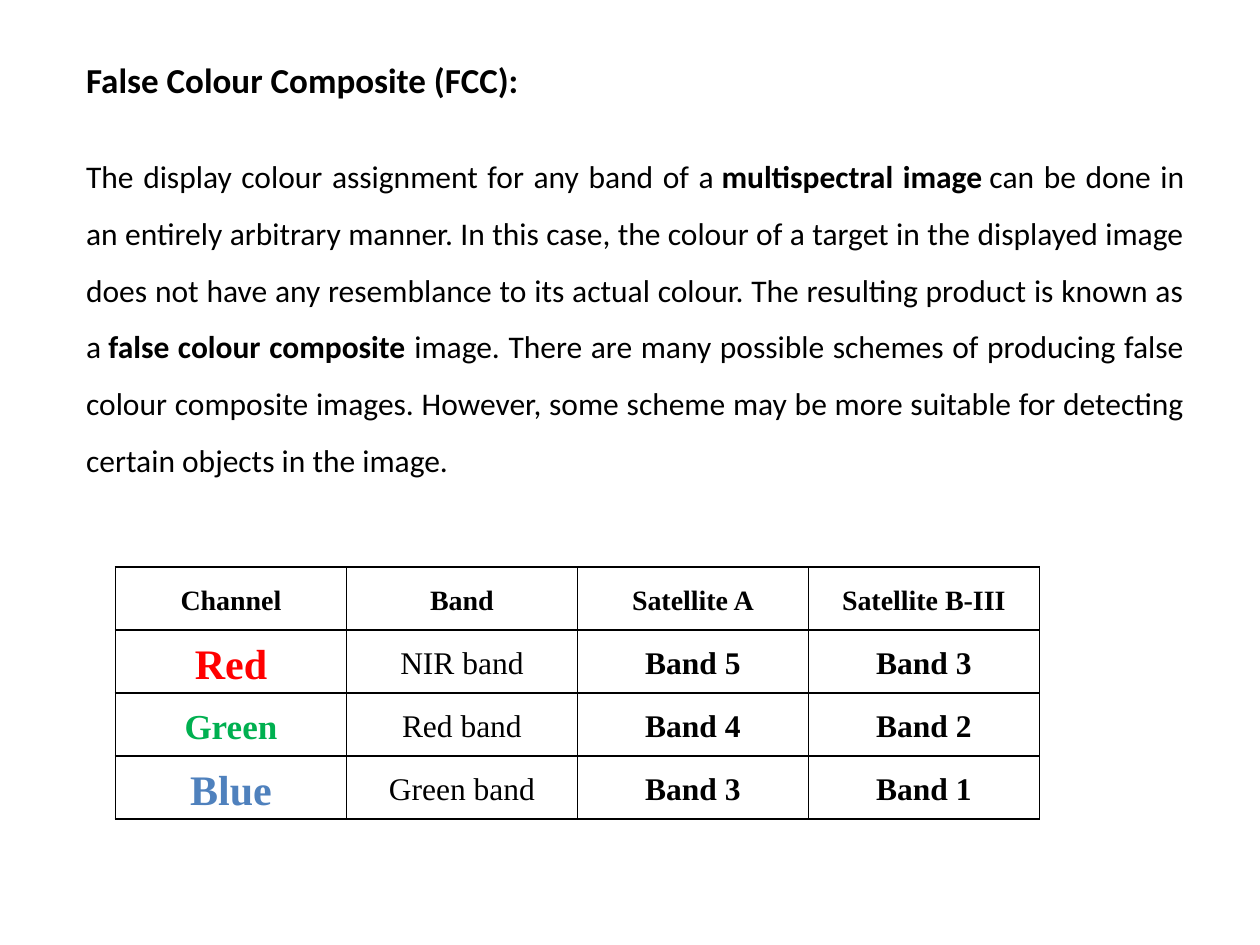
from lxml.etree import SubElement
from pptx import Presentation
from pptx.dml.color import RGBColor
from pptx.enum.text import MSO_ANCHOR as Anchor, MSO_AUTO_SIZE as AutoSize, PP_ALIGN as Align
from pptx.oxml.ns import qn
from pptx.util import Pt

COLORS = {"black": "000000", "red": "FF0000", "green": "00B050", "blue": "4F81BD"}
TEXT_FONT, TABLE_FONT = "Calibri", "Times New Roman"

TITLE = "False Colour Composite (FCC):"
# Each part is a text and whether it is bold
BODY = [
    ("The display colour assignment for any band of a\u00a0", False),
    ("multispectral image", True),
    ("\u00a0can be done in an entirely arbitrary manner. In this case, the colour of a "
     "target in the displayed image does not have any resemblance to its actual colour. "
     "The resulting product is known as a\u00a0", False),
    ("false colour composite ", True),
    ("image. There are many possible schemes of producing false colour composite images. "
     "However, some scheme may be more suitable for detecting certain objects in the "
     "image.", False),
]
HEADER = ["Channel", "Band", "Satellite A", "Satellite B-III"]
CHANNELS = [
    ["Red", "NIR band", "Band 5", "Band 3"],
    ["Green", "Red band", "Band 4", "Band 2"],
    ["Blue", "Green band", "Band 3", "Band 1"],
]
CHANNEL_SIZES = {"Red": 24, "Green": 20, "Blue": 24}


def add_text(para, text, *, size, font=TEXT_FONT, color="black", bold=False):
    span = para.add_run()
    span.text = text
    span.font.name = font
    span.font.size = Pt(size)
    span.font.bold = bold
    span.font.color.rgb = RGBColor.from_string(COLORS[color])


def set_paragraph(para, *, align, spacing=1.0):
    para.alignment = align
    para.line_spacing = spacing
    para.space_before = Pt(0)


def place(box, left, top, width, height):
    box.left, box.top, box.width, box.height = Pt(left), Pt(top), Pt(width), Pt(height)
    frame = box.text_frame
    frame.word_wrap = True
    frame.auto_size = AutoSize.NONE
    frame.vertical_anchor = Anchor.TOP
    return frame.paragraphs[0]


def remove_bullet(para):
    properties = para._p.get_or_add_pPr()
    properties.set("marL", "0")
    properties.set("indent", "0")
    SubElement(properties, qn("a:buNone"))


def set_borders(cell, color="black", width=1):
    properties = cell._tc.get_or_add_tcPr()
    for side in ("L", "R", "T", "B"):
        line = SubElement(properties, qn(f"a:ln{side}"), w=str(Pt(width)))
        fill = SubElement(line, qn("a:solidFill"))
        SubElement(fill, qn("a:srgbClr"), val=COLORS[color])


def fill_cell(cell, text, **text_format):
    set_borders(cell)
    cell.fill.background()
    cell.vertical_anchor = Anchor.MIDDLE
    cell.margin_left = cell.margin_right = Pt(5)
    cell.margin_top = cell.margin_bottom = Pt(0)
    para = cell.text_frame.paragraphs[0]
    set_paragraph(para, align=Align.CENTER, spacing=1.15)
    add_text(para, text, font=TABLE_FONT, **text_format)


def add_band_table(page):
    rows, columns = len(CHANNELS) + 1, len(HEADER)
    table = page.shapes.add_table(
        rows, columns, Pt(66), Pt(324), Pt(132 * columns), Pt(36 * rows)).table
    for column, text in enumerate(HEADER):
        fill_cell(table.cell(0, column), text, size=16, bold=True)
    for row, texts in enumerate(CHANNELS, start=1):
        channel = texts[0]
        fill_cell(table.cell(row, 0), channel, size=CHANNEL_SIZES[channel],
                  color=channel.lower(), bold=True)
        for column, text in enumerate(texts[1:], start=1):
            fill_cell(table.cell(row, column), text, size=18, bold=column > 1)


def main():
    deck = Presentation()
    deck.slide_width, deck.slide_height = Pt(720), Pt(540)
    page = deck.slides.add_slide(deck.slide_layouts[1])
    title, body = page.placeholders

    # Heading
    para = place(title, 42, 30, 642, 34)
    set_paragraph(para, align=Align.LEFT)
    add_text(para, TITLE, size=20, bold=True)

    # Explanation
    para = place(body, 42, 75.5, 642, 204.5)
    set_paragraph(para, align=Align.JUSTIFY, spacing=1.5)
    remove_bullet(para)
    for text, bold in BODY:
        add_text(para, text, size=18, bold=bold)

    # Band assignment for each display channel
    add_band_table(page)
    deck.save("out.pptx")


if __name__ == "__main__":
    main()
